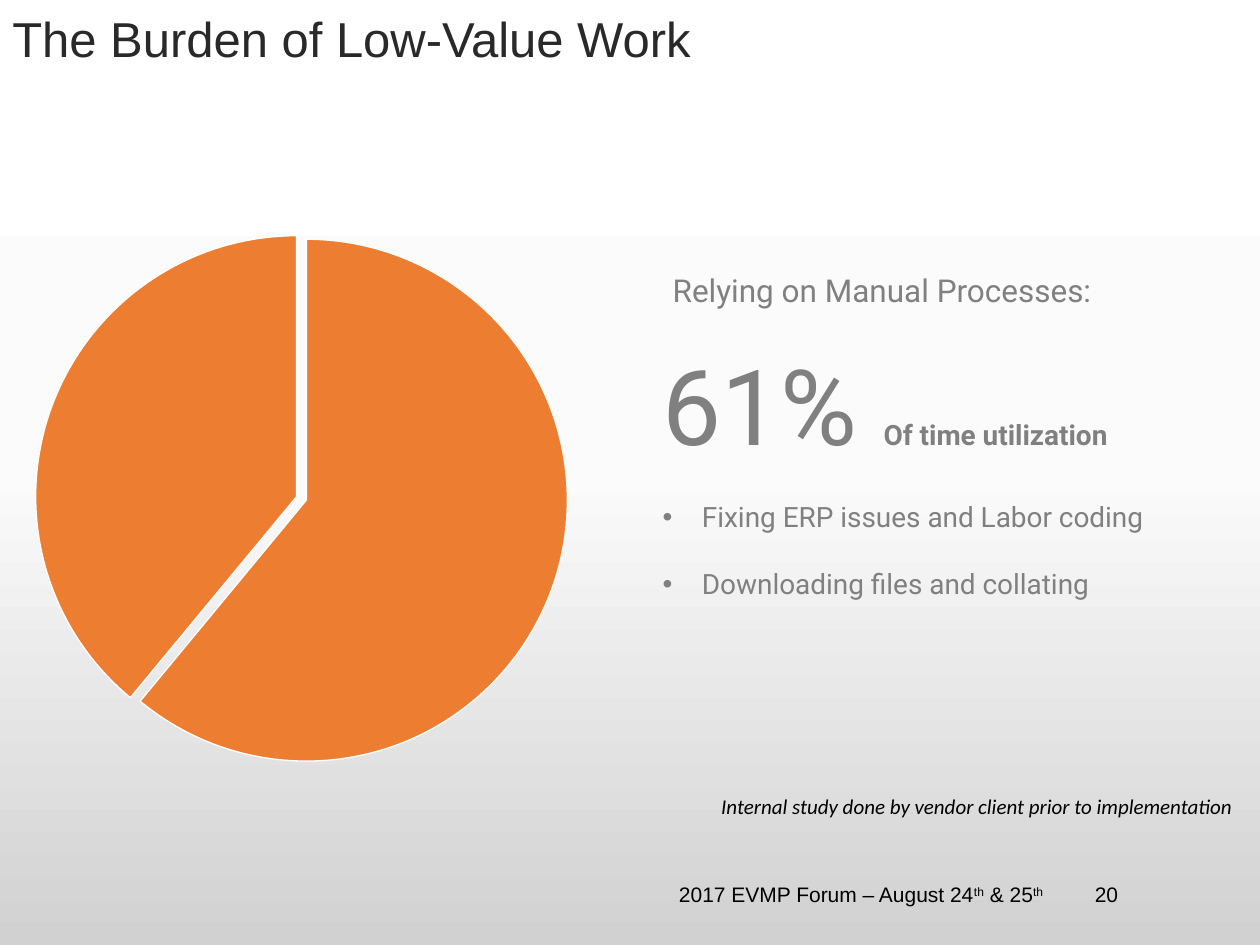
from dataclasses import dataclass
from typing import Optional

from lxml import etree
from pptx import Presentation
from pptx import util as u
from pptx.chart.data import CategoryChartData
from pptx.dml.color import RGBColor
from pptx.enum import chart as charts
from pptx.enum import text
from pptx.oxml import parse_xml
from pptx.oxml.ns import nsdecls, qn

COLORS = {
    "title": "292929",
    "body": "808080",
    "black": "000000",
    "white": "FFFFFF",
    "slice": "ED7D31",
}
BACKDROP = {0: "FFFFFF", 50: "FBFBFB", 100: "D1D1D1"}


@dataclass(frozen=True)
class Span:
    words: str
    size: float
    font: str
    color: str
    bold: bool = False
    italic: bool = False
    raised: bool = False


@dataclass(frozen=True)
class Para:
    spans: tuple[Span, ...]
    bullet: bool = False
    spacing: Optional[float] = None
    align: text.PP_ALIGN = text.PP_ALIGN.LEFT


@dataclass(frozen=True)
class Box:
    left: float
    top: float
    width: float
    height: float
    paras: tuple[Para, ...]


def footer(words: str, raised: bool = False) -> Span:
    return Span(words, 12, "Arial", "black", raised=raised)


def reason(words: str) -> Para:
    return Para((Span(words, 16, "Roboto", "body"),), bullet=True, spacing=2)


BOXES = (
    Box(0, 5, 592, 46, (
        Para((Span("The Burden of Low-Value Work", 28, "Arial", "title"),), spacing=0.9),
    )),
    Box(371.5, 190.8, 323.3, 157.7, (
        Para((
            Span("61% ", 60, "Roboto", "body"),
            Span("Of time utilization", 16, "Roboto", "body", bold=True),
        )),
        reason("Fixing ERP issues and Labor coding"),
        reason("Downloading files and collating"),
    )),
    Box(377.3, 151.2, 311.8, 29, (
        Para((Span("Relying on Manual Processes:", 18, "Roboto", "body"),)),
    )),
    Box(342.7, 450, 368.6, 21.6, (
        Para((
            Span("Internal study done by vendor client prior to implementation",
                 12, "Calibri", "black", italic=True),
        ), align=text.PP_ALIGN.RIGHT),
    )),
    Box(380.9, 500.4, 236.9, 28.8, (
        Para((
            footer("2017 EVMP Forum – August 24"),
            footer("th", raised=True),
            footer(" & 25"),
            footer("th", raised=True),
        )),
    )),
    Box(618.5, 500.4, 51.8, 28.8, (Para((footer("20"),)),)),
)


def rgb(name: str) -> RGBColor:
    return RGBColor.from_string(COLORS[name])


def paint_background(page) -> None:
    fill = page.background.fill
    fill.gradient()
    fill.gradient_angle = 270
    stops = page.background._cSld.find(".//" + qn("a:gsLst"))
    for stop in list(stops):
        stops.remove(stop)
    for percent, color in BACKDROP.items():
        stop = etree.SubElement(stops, qn("a:gs"), pos=str(percent * 1000))
        etree.SubElement(stop, qn("a:srgbClr"), val=color)


def add_span(paragraph, span: Span) -> None:
    run = paragraph.add_run()
    run.text = span.words
    run.font.size = u.Pt(span.size)
    run.font.name = span.font
    run.font.bold = span.bold
    run.font.italic = span.italic
    run.font.color.rgb = rgb(span.color)
    if span.raised:
        run.font._element.set("baseline", "30000")


def add_bullet(paragraph) -> None:
    properties = paragraph._p.get_or_add_pPr()
    indent = u.Pt(22.5)
    properties.set("marL", str(indent))
    properties.set("indent", str(-indent))
    etree.SubElement(properties, qn("a:buFont"), typeface="Arial")
    etree.SubElement(properties, qn("a:buChar"), char="•")


def add_box(page, box: Box) -> None:
    shape = page.shapes.add_textbox(
        u.Pt(box.left), u.Pt(box.top), u.Pt(box.width), u.Pt(box.height))
    frame = shape.text_frame
    frame.word_wrap = True
    for index, para in enumerate(box.paras):
        paragraph = frame.add_paragraph() if index else frame.paragraphs[0]
        paragraph.alignment = para.align
        if para.spacing:
            paragraph.line_spacing = para.spacing
        if para.bullet:
            add_bullet(paragraph)
        for span in para.spans:
            add_span(paragraph, span)


def place_plot(chart, x: float, y: float, w: float, h: float) -> None:
    area = chart._chartSpace.find(".//" + qn("c:plotArea"))
    for layout in area.findall(qn("c:layout")):
        area.remove(layout)
    area.insert(0, parse_xml(
        f'<c:layout {nsdecls("c")}><c:manualLayout><c:layoutTarget val="inner"/>'
        '<c:xMode val="edge"/><c:yMode val="edge"/>'
        f'<c:x val="{x}"/><c:y val="{y}"/><c:w val="{w}"/><c:h val="{h}"/>'
        "</c:manualLayout></c:layout>"))


def add_time_pie(page) -> None:
    data = CategoryChartData()
    data.categories = ["1", "2"]
    data.add_series("Series 1", (61, 39))
    chart = page.shapes.add_chart(
        charts.XL_CHART_TYPE.PIE, u.Pt(-48.2), u.Pt(111.6), u.Pt(380.2), u.Pt(339.8), data).chart
    chart.has_title = False
    chart.has_legend = False
    chart.font.name = "Calibri"
    chart.font.size = u.Pt(18)
    chart.font.color.rgb = rgb("black")
    plot = chart.plots[0]
    plot.vary_by_categories = False
    series = plot.series[0]
    for form in (series.format, series.points[0].format, series.points[1].format):
        form.fill.solid()
        form.fill.fore_color.rgb = rgb("slice")
        form.line.color.rgb = rgb("white")
        form.line.width = u.Pt(0.75)
    series._element.find(qn("c:spPr")).addnext(
        parse_xml(f'<c:explosion {nsdecls("c")} val="2"/>'))
    place_plot(chart, 0.18, 0.04, 0.8, 0.94)


def main() -> None:
    deck = Presentation()
    deck.slide_width = u.Pt(720)
    deck.slide_height = u.Pt(540)
    page = deck.slides.add_slide(deck.slide_layouts[6])
    paint_background(page)
    add_time_pie(page)
    for box in BOXES:
        add_box(page, box)
    deck.save("out.pptx")


if __name__ == "__main__":
    main()
